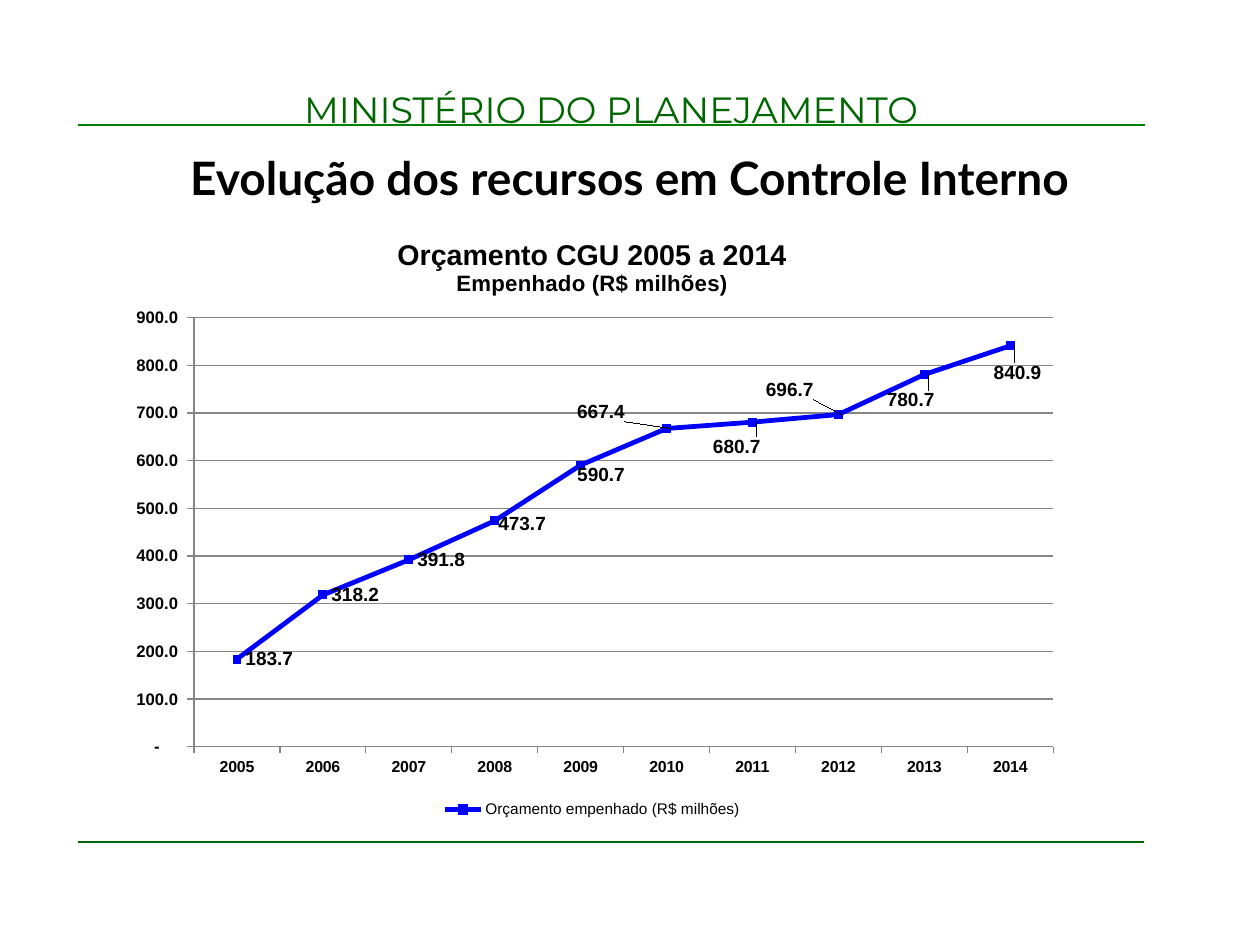
from lxml import etree
from pptx import Presentation
from pptx.chart.data import CategoryChartData
from pptx.dml.color import RGBColor
from pptx.enum.chart import (XL_CHART_TYPE, XL_LABEL_POSITION, XL_LEGEND_POSITION,
                             XL_MARKER_STYLE, XL_TICK_MARK)
from pptx.enum.shapes import MSO_CONNECTOR
from pptx.enum.text import PP_ALIGN
from pptx.oxml import parse_xml
from pptx.oxml.ns import nsdecls, qn
from pptx.util import Pt

STACKED_LINE = XL_CHART_TYPE.LINE_MARKERS_STACKED
RIGHT = XL_LABEL_POSITION.RIGHT
BOTTOM = XL_LEGEND_POSITION.BOTTOM
SQUARE = XL_MARKER_STYLE.SQUARE
OUTSIDE = XL_TICK_MARK.OUTSIDE
STRAIGHT = MSO_CONNECTOR.STRAIGHT
CENTER = PP_ALIGN.CENTER

EMU_PER_PX = 8000
BLANK_LAYOUT = 6
BLACK, GREY, BLUE = "000000", "868686", "0000FF"
AXIS_FORMAT = r'_(* #,##0.0_);_(* \(#,##0.0\);_(* "-"??_);_(@_)'

YEARS = [str(year) for year in range(2005, 2015)]
BUDGET = [183.7, 318.2, 391.8, 473.7, 590.7, 667.4, 680.7, 696.7, 780.7, 840.9]
# Label shifts in px from the place right of the point
LABEL_SHIFTS = {3: (-5, 3), 4: (-12, 10), 5: (-98, -17), 6: (-48, 25),
                7: (-81, -25), 8: (-46, 26), 9: (-25, 27)}


def px(n):
    return n * EMU_PER_PX


def color(value):
    return RGBColor.from_string(value)


def manual_layout(x, y, w=None, h=None, inner=False, edge=True):
    """Build a c:layout from fractions of the chart; edge=False means an offset."""
    parts = ['<c:layoutTarget val="inner"/>'] if inner else []
    if edge:
        parts += ['<c:xMode val="edge"/>', '<c:yMode val="edge"/>']
    for tag, value in (("x", x), ("y", y), ("w", w), ("h", h)):
        if value is not None:
            parts.append(f'<c:{tag} val="{value:.4f}"/>')
    return parse_xml(f'<c:layout {nsdecls("c")}><c:manualLayout>{"".join(parts)}'
                     '</c:manualLayout></c:layout>')


def replace_layout(parent, layout, after=None):
    """Put the layout in parent, after the child named by after, or first."""
    for old in parent.findall(qn("c:layout")):
        parent.remove(old)
    if after is None:
        parent.insert(0, layout)
    else:
        parent.find(qn(after)).addnext(layout)


class Deck:
    def __init__(self, width, height):
        self.prs = Presentation()
        self.prs.slide_width, self.prs.slide_height = px(width), px(height)
        self.s = self.prs.slides.add_slide(self.prs.slide_layouts[BLANK_LAYOUT])

    def style(self, font, size, bold=False, fill=BLACK, name="Arial"):
        font.name, font.size, font.bold = name, Pt(size), bold
        font.color.rgb = color(fill)

    def run(self, p, text, **style):
        r = p.add_run()
        r.text = text
        self.style(r.font, **style)

    def heading(self, text, x, y, w, h, **style):
        tf = self.s.shapes.add_textbox(px(x), px(y), px(w), px(h)).text_frame
        tf.word_wrap = True
        tf.margin_top = tf.margin_bottom = 0
        p = tf.paragraphs[0]
        p.alignment = CENTER
        self.run(p, text, **style)

    def rule(self, x1, x2, y, stroke):
        line = self.s.shapes.add_connector(STRAIGHT, px(x1), px(y), px(x2), px(y))
        line.line.color.rgb = color(stroke)
        line.line.width = Pt(0.75)
        etree.SubElement(line._element.spPr, qn("a:effectLst"))

    def stroke(self, line, fill, width):
        line.color.rgb = color(fill)
        line.width = Pt(width)

    def axis(self, axis, size):
        axis.major_tick_mark = OUTSIDE
        self.style(axis.tick_labels.font, size, bold=True)
        self.stroke(axis.format.line, GREY, 0.75)

    def chart_title(self, chart, lines, x, y):
        title = chart.chart_title
        tf = title.text_frame
        for i, (text, size) in enumerate(lines):
            p = tf.paragraphs[0] if i == 0 else tf.add_paragraph()
            p.alignment = CENTER
            self.run(p, text, size=size, bold=True)
        replace_layout(title._element, manual_layout(x, y), after="c:tx")

    def point_labels(self, series, shifts, w, h):
        labels = series.data_labels
        labels.show_value = True
        labels.number_format, labels.number_format_is_linked = "#,##0.0", False
        labels.position = RIGHT
        self.style(labels.font, 12, bold=True)
        for i, (dx, dy) in shifts.items():
            label = series.points[i].data_label
            self.style(label.font, 12, bold=True)
            label.position = RIGHT
            item = labels._element.xpath(f"c:dLbl[c:idx/@val='{i}']")[0]
            replace_layout(item, manual_layout(dx / w, dy / h, edge=False), after="c:idx")

    def line_chart(self, name, cats, values, shifts, title, x, y, w, h):
        data = CategoryChartData(number_format="#,##0.0")
        data.categories = cats
        data.add_series(name, values)
        chart = self.s.shapes.add_chart(STACKED_LINE, px(x), px(y), px(w), px(h), data).chart
        self.style(chart.font, 10)
        self.chart_title(chart, title, 0.293, 0.04)
        replace_layout(chart._chartSpace.chart.plotArea,
                       manual_layout(0.0845, 0.177, 0.896, 0.699, inner=True))

        chart.has_legend = True
        chart.legend.position = BOTTOM
        chart.legend.include_in_layout = False
        self.style(chart.legend.font, 9.7)

        self.axis(chart.category_axis, 10)
        value_axis = chart.value_axis
        self.axis(value_axis, 10.5)
        value_axis.minimum_scale, value_axis.maximum_scale = 0, 900
        value_axis.major_unit = 100
        value_axis.tick_labels.number_format = AXIS_FORMAT
        value_axis.tick_labels.number_format_is_linked = False
        value_axis.has_major_gridlines = True
        self.stroke(value_axis.major_gridlines.format.line, GREY, 0.75)

        chart.plots[0].vary_by_categories = False
        series = chart.plots[0].series[0]
        series.smooth = False
        self.stroke(series.format.line, BLUE, 3)
        marker = series.marker
        marker.style, marker.size = SQUARE, 5
        marker.format.fill.solid()
        marker.format.fill.fore_color.rgb = color(BLUE)
        marker.format.line.color.rgb = color(BLUE)
        self.point_labels(series, shifts, w, h)


def main():
    deck = Deck(1260, 945)
    deck.heading("MINISTÉRIO DO PLANEJAMENTO", 40, 87, 1143, 45,
                 size=23, fill="006600", name="Montserrat")
    deck.rule(78, 1144, 842, "006600")
    deck.rule(78, 1145, 125, "008000")
    deck.heading("Evolução dos recursos em Controle Interno", 0, 150, 1260, 56,
                 size=29, bold=True, name="Lato")
    deck.line_chart("Orçamento empenhado (R$ milhões)", YEARS, BUDGET, LABEL_SHIFTS,
                    [("Orçamento CGU 2005 a 2014", 18), ("Empenhado (R$ milhões)", 14)],
                    113, 209, 959, 614)
    deck.prs.save("out.pptx")


if __name__ == "__main__":
    main()
